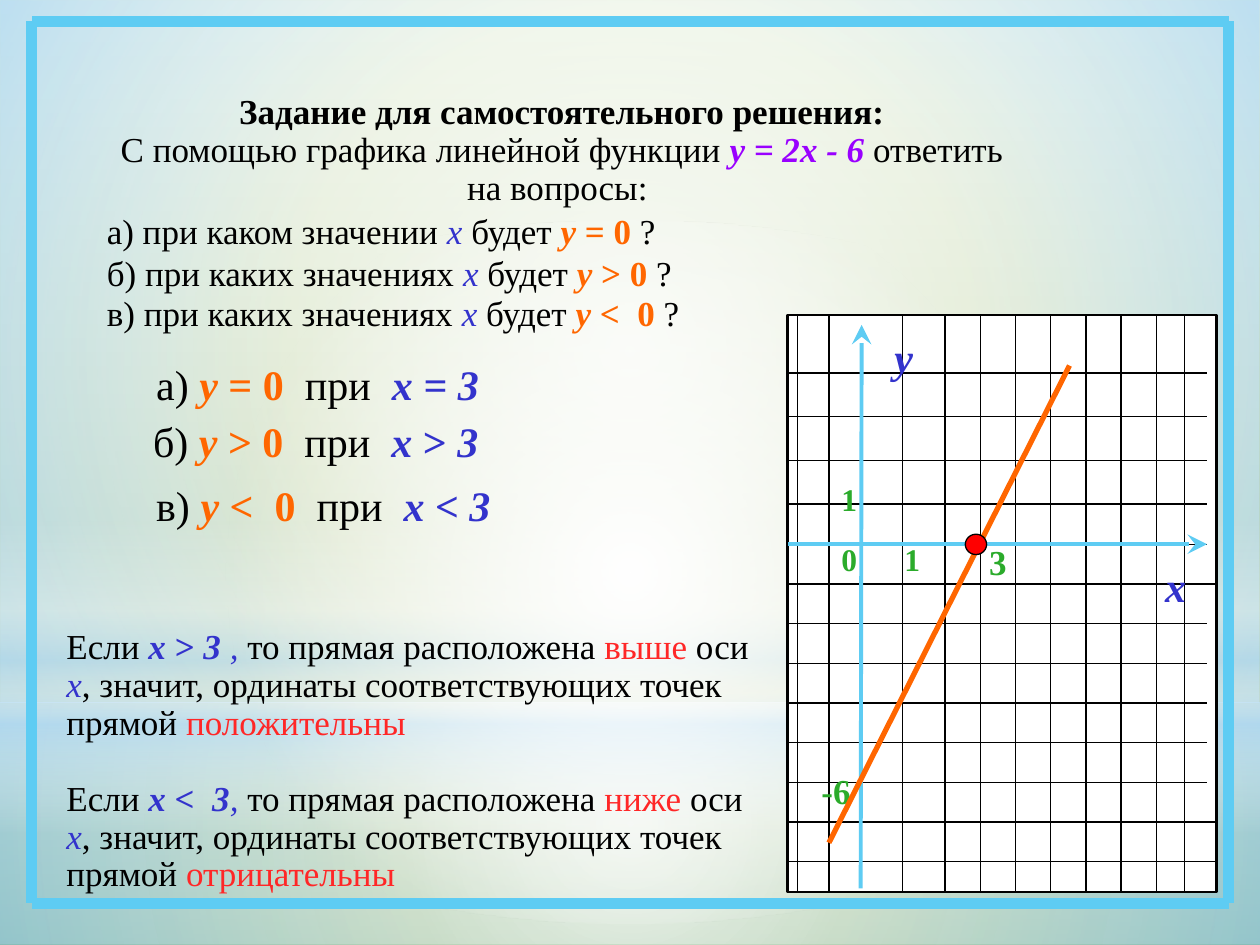
from pptx import Presentation as Deck
from pptx.dml.color import RGBColor as Rgb
from pptx.enum.shapes import MSO_CONNECTOR as Link, MSO_SHAPE as Form
from pptx.enum.text import MSO_ANCHOR as Anchor, MSO_AUTO_SIZE as Fit, PP_ALIGN as Align
from pptx.oxml import parse_xml as to_xml
from pptx.oxml.ns import nsdecls as names, qn
from pptx.util import Cm, Pt

FONT = "Times New Roman"
HUES = {
    "ink": "000000", "paper": "FFFFFF", "sky": "5ECCF3", "blue": "3333CC",
    "fire": "FF6600", "plum": "9900FF", "red": "FF2727", "dot": "FF0000",
    "leaf": "2BAB2B", "mist": "B4DCFA", "pale": "DDEBCF", "moss": "9CB86E",
    "pine": "156B13",
}


def hue(key):
    return Rgb.from_string(HUES[key])


def blend(root, stops, round_fill=False):
    marks = "".join(
        f'<a:gs pos="{pos * 1000}"><a:srgbClr val="{HUES[key]}">'
        f'<a:alpha val="{alpha * 1000}"/></a:srgbClr></a:gs>'
        for pos, key, alpha in stops)
    if round_fill:
        way = ('<a:path path="circle"><a:fillToRect l="50000" t="50000" '
               'r="50000" b="50000"/></a:path>')
    else:
        way = '<a:lin ang="5400000" scaled="0"/>'
    fill = to_xml(f'<a:gradFill {names("a")} rotWithShape="1">'
                  f'<a:gsLst>{marks}</a:gsLst>{way}</a:gradFill>')
    void = next(root.iter(qn("a:noFill")))
    void.getparent().replace(void, fill)


def add_form(shapes, form, box):
    shape = shapes.add_shape(form, *map(Cm, box))
    shape.shadow.inherit = False
    return shape


def add_glow(shapes, form, box, stops, round_fill=True):
    shape = add_form(shapes, form, box)
    shape.fill.background()
    blend(shape.element, stops, round_fill)
    shape.line.fill.background()


def add_solid(shapes, form, box, fill, width):
    shape = add_form(shapes, form, box)
    shape.fill.solid()
    shape.fill.fore_color.rgb = hue(fill)
    shape.line.color.rgb = hue("ink")
    shape.line.width = Pt(width)


def add_line(shapes, ends, key="ink", width=0.75, arrow=False):
    line = shapes.add_connector(Link.STRAIGHT, *map(Cm, ends))
    line.line.color.rgb = hue(key)
    line.line.width = Pt(width)
    if arrow:
        line.line._get_or_add_ln().append(to_xml(
            f'<a:headEnd {names("a")} type="stealth" w="lg" len="lg"/>'))
    line.element.spPr.append(to_xml(f'<a:effectLst {names("a")}/>'))


def write(frame, paras, size, align=Align.LEFT, gaps=(), space=0):
    frame.word_wrap = True
    frame.auto_size = Fit.NONE
    frame.vertical_anchor = Anchor.TOP
    for num, runs in enumerate(paras):
        para = frame.paragraphs[0] if num == 0 else frame.add_paragraph()
        para.alignment = align
        para.space_before = Pt(space)
        if gaps:
            para.line_spacing = gaps[num]
        for text, key, *look in runs:
            run = para.add_run()
            run.text = text
            font = run.font
            font.name, font.size = FONT, Pt(size)
            font.color.rgb = hue(key)
            font.bold, font.italic = "b" in look, "i" in look


def add_text(shapes, box, runs, size, align=Align.LEFT, gap=1):
    frame = shapes.add_textbox(*map(Cm, box)).text_frame
    write(frame, [runs], size, align, [gap])


def fill_holder(slide, holder, box, paras, gaps, align, space=0):
    holder.left, holder.top, holder.width, holder.height = map(Cm, box)
    write(holder.text_frame, paras, 20, align, gaps, space)
    for para in holder.text_frame.paragraphs:
        props = para._p.get_or_add_pPr()
        props.set("marL", "0")
        props.set("indent", "0")
        props.append(to_xml(f'<a:buNone {names("a")}/>'))
    slide.shapes.element.append(holder.element)


def add_back(slide):
    slide.background.fill.background()
    blend(slide.element, [(0, "pale", 100), (73, "moss", 100), (100, "pine", 100)])
    shapes = slide.shapes
    add_glow(shapes, Form.RECTANGLE, (0, 14.17, 25.4, 4.88),
             [(0, "paper", 91), (37, "paper", 76), (100, "mist", 79)])
    add_glow(shapes, Form.RECTANGLE, (0, 0, 25.4, 14.17),
             [(0, "paper", 89), (48, "paper", 62), (100, "mist", 79)])
    add_glow(shapes, Form.RECTANGLE, (0, 10.46, 25.4, 6.35),
             [(0, "paper", 0), (29, "paper", 30), (45, "mist", 40),
              (55, "paper", 26), (65, "mist", 60), (100, "paper", 0)], False)
    add_glow(shapes, Form.OVAL, (0, 4.45, 25.4, 14.17),
             [(0, "paper", 100), (56, "paper", 0)])
    left, top, right, end = 0.64, 0.43, 24.77, 18.21
    for x in (left, right):
        add_line(shapes, (x, top, x, end), "sky", 6)
    for y in (end, top):
        add_line(shapes, (right, y, left, y), "sky", 6)


def add_task(slide):
    title, body = slide.placeholders
    fill_holder(slide, title, (1.9, 1.78, 18.85, 2.7), [
        [("Задание для самостоятельного решения:", "ink", "b")],
        [("С помощью графика линейной функции ", "ink"),
         ("у = 2х - 6", "plum", "b", "i"), (" ответить на вопросы: ", "ink")],
    ], (0.9, 0.9), Align.CENTER)
    asks = [("а) при каком значении ", "у", " = 0"),
            ("б) при каких значениях ", "у ", "> 0 "),
            ("в) при каких значениях ", "у <  ", "0 ")]
    tails = (" ?", "?", "?")
    paras = [[(lead, "ink"), ("х ", "blue", "i"), ("будет ", "ink"),
              (var, "fire", "b", "i"), (rest, "fire", "b"), (tail, "ink")]
             for (lead, var, rest), tail in zip(asks, tails)]
    fill_holder(slide, body, (1.9, 4.47, 18.85, 2.67), paras,
                (0.5, 0.6, 0.5), Align.LEFT, 10)


def add_plot(slide):
    shapes = slide.shapes.add_group_shape().shapes
    left, top, end, zero = 15.88, 6.35, 17.98, 10.97
    add_solid(shapes, Form.RECTANGLE, (left, top, 8.64, 11.63), "paper", 1.5)
    for x in [16.08, 16.71, 18.19, 23.88] + [19.05 + 0.71 * n for n in range(7)]:
        add_line(shapes, (x, end, x, top))
    for n in range(4):
        y = 7.52 + 0.88 * n
        add_line(shapes, (left, y, 24.33, y))
    for n in range(9):
        y = zero + 0.8 * n
        add_line(shapes, (left, y, 24.52 if n in (1, 7, 8) else 24.33, y))
    add_line(shapes, (17.37, 6.55, 17.35, 17.91), "sky", 2.25, True)
    add_line(shapes, (24.33, zero, left, zero), "sky", 2.25, True)
    for text, size, x, y, wide in [
            ("1", 18, 17.98, 10.77, 1.14), ("0", 18, 16.71, 10.77, 0.69),
            ("1", 18, 16.71, 9.55, 0.69), ("3", 20, 19.69, 10.77, 1.37),
            ("-6", 20, 16.31, 15.39, 1.37)]:
        add_text(shapes, (x, y, wide, 1.05), [(text, "leaf", "b")], size)
    for text, x, y in [("у", 17.78, 6.55), ("х", 23.24, 11.18)]:
        add_text(shapes, (x, y, 0.9, 1.27), [(text, "blue", "b", "i")], 24)
    add_line(shapes, (16.71, 16.99, 21.56, 7.37), "fire", 3)
    add_solid(shapes, Form.OVAL, (19.46, 10.77, 0.43, 0.41), "dot", 0.75)


def add_keys(slide):
    for box, lead, var, rest, root, align in [
            ((2.9, 7.11, 7.62, 1.27), "а) ", "у", " = 0",
             [("х = 3", "blue", "b", "i")], Align.LEFT),
            ((2.21, 8.26, 8.31, 1.27), "б) ", "у ", "> 0",
             [("х ", "blue", "b", "i"), (">", "blue", "b"),
              (" 3", "blue", "b", "i")], Align.CENTER),
            ((2.9, 9.55, 9.93, 1.27), "в) ", "у < ", " 0",
             [("х < 3", "blue", "b", "i")], Align.LEFT)]:
        runs = [(lead, "ink"), (var, "fire", "b", "i"), (rest, "fire", "b"),
                ("  при  ", "ink"), *root]
        add_text(slide.shapes, box, runs, 24, align)


def add_notes(slide):
    for y, case, side, sign in [
            (12.57, [("х ", "blue", "b", "i"), (">", "blue", "b"),
                     (" 3", "blue", "b", "i"), (" , ", "blue", "i")],
             "выше ", "положительны"),
            (15.62, [("х <  3", "blue", "b", "i"), (", ", "blue", "i")],
             "ниже ", "отрицательны")]:
        runs = [("Если ", "ink"), *case, ("то прямая расположена ", "ink"),
                (side, "red"), ("оси", "ink"), (" х", "blue", "i"),
                (", значит, ординаты соответствующих точек прямой ", "ink"),
                (sign, "red")]
        add_text(slide.shapes, (1.09, y, 14.35, 2.57), runs, 20, gap=0.9)


def main():
    deck = Deck()
    deck.slide_width, deck.slide_height = Cm(25.4), Cm(19.05)
    slide = deck.slides.add_slide(deck.slide_layouts[1])
    add_back(slide)
    add_task(slide)
    add_plot(slide)
    add_keys(slide)
    add_notes(slide)
    deck.save("out.pptx")


if __name__ == "__main__":
    main()
